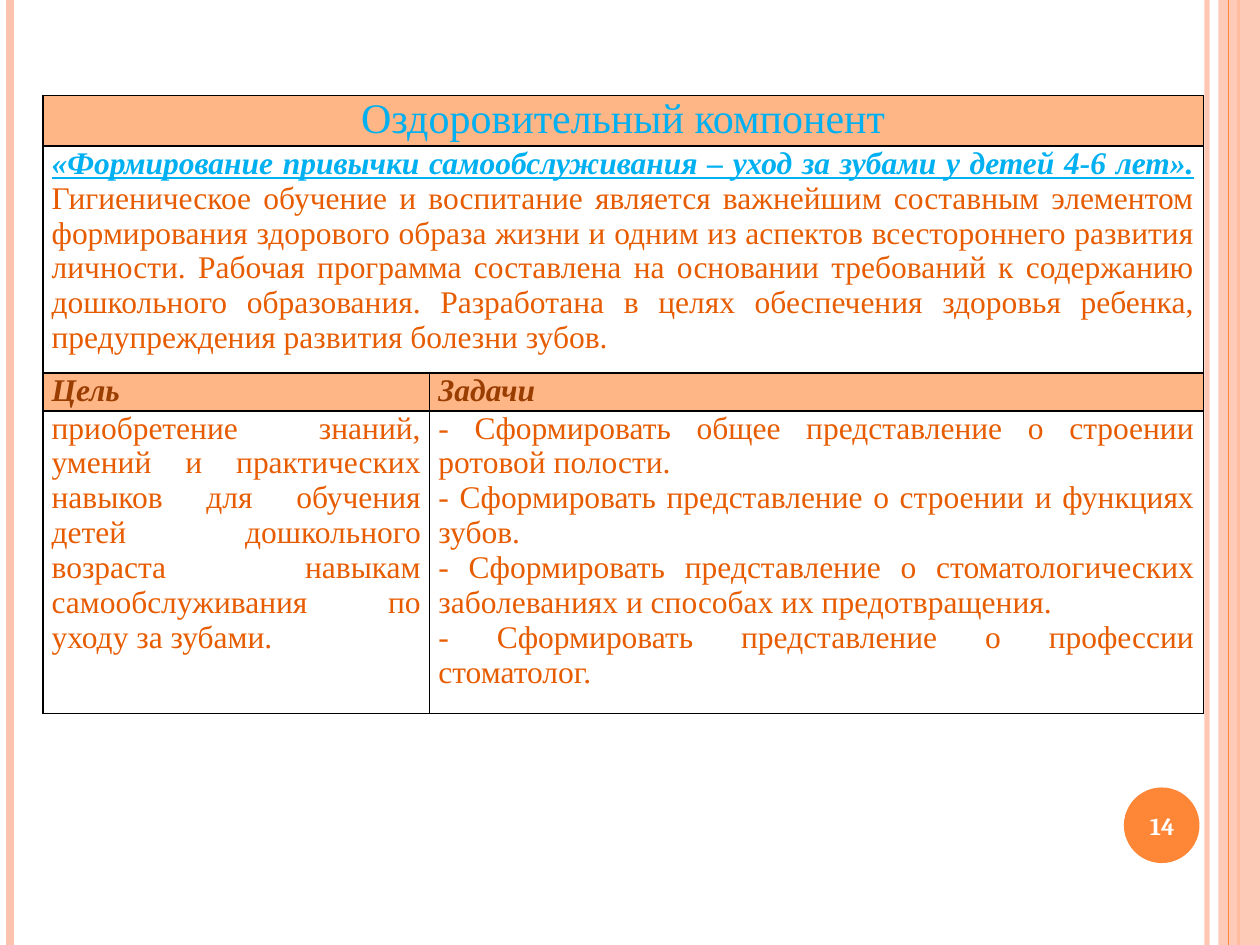
from lxml.etree import SubElement
from pptx import Presentation
from pptx.dml.color import RGBColor
from pptx.enum.shapes import MSO_CONNECTOR as Connector, MSO_SHAPE as Shape
from pptx.enum.text import MSO_ANCHOR as Anchor, PP_ALIGN as Align
from pptx.oxml.ns import qn
from pptx.util import Inches, Pt

ORANGE, PINK, PEACH = "FE8637", "FEC3AE", "FEB687"
BLUE, RUST, BROWN = "00B0F0", "E75C01", "9A3D01"

HEADING = "Оздоровительный компонент"
PROGRAMME = "«Формирование привычки самообслуживания – уход за зубами у детей 4-6 лет»."
SUMMARY = (
    "Гигиеническое обучение и воспитание является важнейшим составным элементом "
    "формирования здорового образа жизни и одним из аспектов всестороннего развития "
    "личности. Рабочая программа составлена на основании требований к содержанию "
    "дошкольного образования. Разработана в целях обеспечения здоровья ребенка, "
    "предупреждения развития болезни зубов."
)
GOAL = (
    "приобретение знаний, умений и практических навыков для обучения детей "
    "дошкольного возраста навыкам самообслуживания по уходу за зубами."
)
TASKS = [
    "- Сформировать общее представление о строении ротовой полости.",
    "- Сформировать представление о строении и функциях зубов.",
    "- Сформировать представление о стоматологических заболеваниях и способах их предотвращения.",
    "- Сформировать представление о профессии стоматолог.",
]


def rgb(value):
    return RGBColor.from_string(value)


def set_alpha(fill_parent, percent):
    """Make the solid colour inside an element partly transparent."""
    color = next(fill_parent.iter(qn("a:srgbClr")))
    SubElement(color, qn("a:alpha")).set("val", str(percent * 1000))


def add_stripe(slide, x, color, width, alpha=100):
    """Draw a vertical line over the full height of the slide."""
    stripe = slide.shapes.add_connector(
        Connector.STRAIGHT, Inches(x), 0, Inches(x), Inches(7.5))
    stripe.line.color.rgb = rgb(color)
    stripe.line.width = Pt(width)
    properties = stripe._element.spPr
    if alpha < 100:
        set_alpha(properties, alpha)
    SubElement(properties, qn("a:effectLst"))


def add_plain_shape(slide, kind, box, color, alpha=100):
    shape = slide.shapes.add_shape(kind, *map(Inches, box))
    shape.shadow.inherit = False
    shape.fill.solid()
    shape.fill.fore_color.rgb = rgb(color)
    shape.line.fill.background()
    if alpha < 100:
        set_alpha(shape._element.spPr, alpha)


def style_font(font, size, color, bold=False, italic=False, name="Times New Roman"):
    font.name = name
    font.size = Pt(size)
    font.bold = bold
    font.italic = italic
    font.color.rgb = rgb(color)


def add_page_number(slide, number):
    label = slide.shapes.add_textbox(*map(Inches, (8.89, 6.27, 0.67, 0.57)))
    frame = label.text_frame
    frame.word_wrap = True
    frame.vertical_anchor = Anchor.MIDDLE
    paragraph = frame.paragraphs[0]
    paragraph.text = number
    paragraph.alignment = Align.CENTER
    style_font(paragraph.font, 14, "FFFFFF", bold=True, name="Cambria")


def format_cell(cell, fill=None):
    cell.margin_left = cell.margin_right = Inches(0.07)
    cell.margin_top = cell.margin_bottom = 0
    properties = cell._tc.get_or_add_tcPr()
    for side in ("lnL", "lnR", "lnT", "lnB"):
        border = SubElement(properties, qn(f"a:{side}"), w=str(Pt(1)))
        SubElement(SubElement(border, qn("a:solidFill")), qn("a:srgbClr"), val="000000")
    if fill:
        cell.fill.solid()
        cell.fill.fore_color.rgb = rgb(fill)
    else:
        cell.fill.background()


def write_cell(cell, lines, size, color, align, bold=False, italic=False):
    cell.text = "\n".join(lines)
    for paragraph in cell.text_frame.paragraphs:
        paragraph.alignment = align
        style_font(paragraph.font, size, color, bold, italic)


def write_summary(cell):
    paragraph = cell.text_frame.paragraphs[0]
    paragraph.alignment = Align.JUSTIFY
    for text, color, strong, underline in (
        (PROGRAMME, BLUE, True, True),
        (" ", BLUE, False, True),
        (SUMMARY, RUST, False, False),
    ):
        run = paragraph.add_run()
        run.text = text
        style_font(run.font, 18, color, strong, strong)
        run.font.underline = underline


def add_component_table(slide):
    widths, heights = (3.07, 6.14), (0.37, 1.66, 0.28, 2.21)
    table = slide.shapes.add_table(
        4, 2, Inches(0.34), Inches(0.76), Inches(sum(widths)), Inches(sum(heights))).table
    table.first_row = table.horz_banding = False
    for column, width in zip(table.columns, widths):
        column.width = Inches(width)
    for row, height, fill in zip(table.rows, heights, (PEACH, None, PEACH, None)):
        row.height = Inches(height)
        for cell in row.cells:
            format_cell(cell, fill)
    for index in (0, 1):
        table.cell(index, 0).merge(table.cell(index, 1))

    write_cell(table.cell(0, 0), [HEADING], 24, BLUE, Align.CENTER)
    write_summary(table.cell(1, 0))
    for index, (title, lines) in enumerate((("Цель", [GOAL]), ("Задачи", TASKS))):
        write_cell(table.cell(2, index), [title], 18, BROWN, Align.LEFT, True, True)
        write_cell(table.cell(3, index), lines, 18, RUST, Align.JUSTIFY)


def main():
    deck = Presentation()
    deck.slide_width, deck.slide_height = Inches(10), Inches(7.5)
    slide = deck.slides.add_slide(deck.slide_layouts[6])

    add_stripe(slide, 9.58, PINK, 3, alpha=93)
    add_stripe(slide, 0.08, PINK, 4.5)
    add_stripe(slide, 9.83, ORANGE, 1.5)
    add_plain_shape(slide, Shape.RECTANGLE, (9.67, 0, 0.33, 7.5), PINK, alpha=87)
    add_stripe(slide, 9.75, ORANGE, 0.75)
    add_plain_shape(slide, Shape.OVAL, (8.92, 6.25, 0.6, 0.6), ORANGE)
    add_page_number(slide, "14")
    add_component_table(slide)
    deck.save("out.pptx")


if __name__ == "__main__":
    main()
